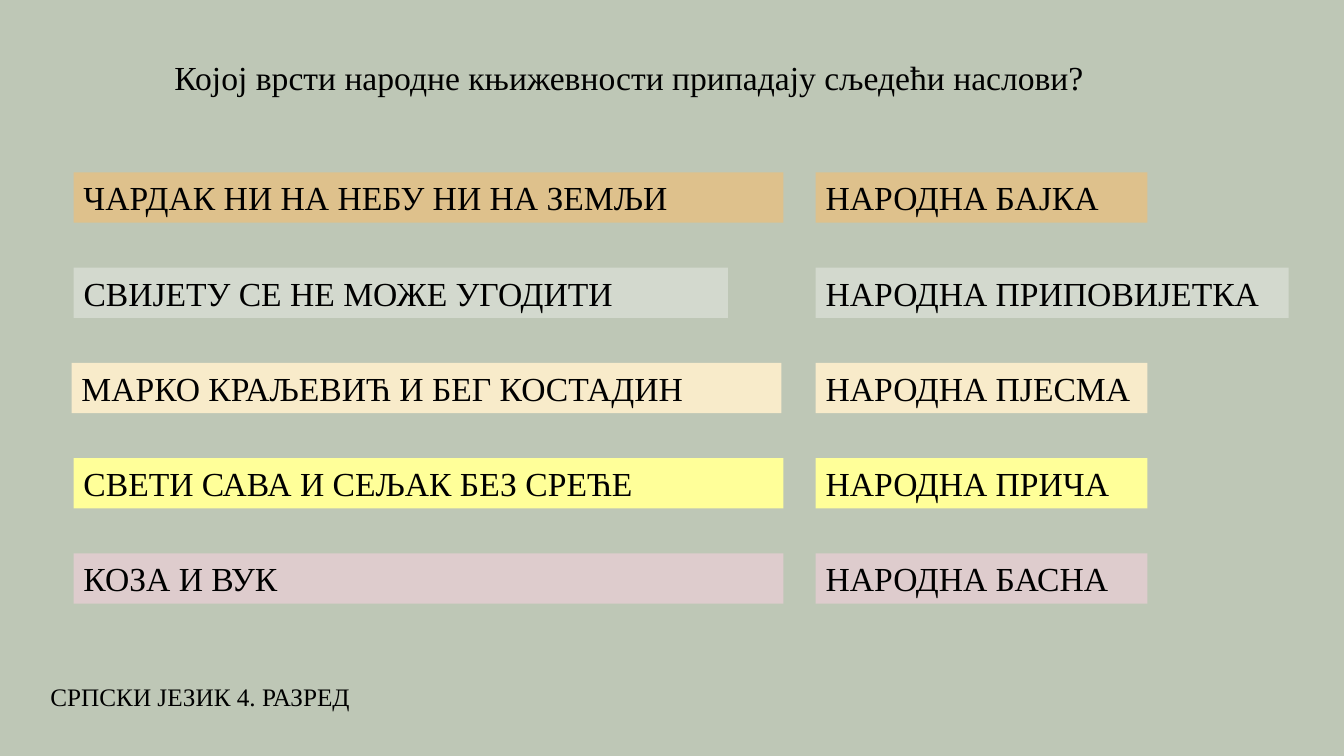
from pptx import Presentation
from pptx.dml.color import RGBColor
from pptx.enum.shapes import MSO_SHAPE as Shape
from pptx.enum.text import MSO_ANCHOR as Anchor, MSO_AUTO_SIZE as AutoSize, PP_ALIGN as Align
from pptx.util import Inches, Pt


def colour(value):
    return RGBColor.from_string(value)


class QuizPage:
    font_name = "Times New Roman"
    ink = "000000"

    def __init__(self, deck, background):
        self.page = deck.slides.add_slide(deck.slide_layouts[5])
        fill = self.page.background.fill
        fill.solid()
        fill.fore_color.rgb = colour(background)

    def set_text(self, box, text, size=24, align=Align.LEFT, anchor=Anchor.TOP, fit=AutoSize.SHAPE_TO_FIT_TEXT):
        frame = box.text_frame
        frame.text = text
        frame.word_wrap = True
        frame.auto_size = fit
        frame.vertical_anchor = anchor
        para = frame.paragraphs[0]
        para.alignment = align
        para.font.name = self.font_name
        para.font.size = Pt(size)
        para.font.color.rgb = colour(self.ink)

    def title(self, text, left, top, width, height):
        box = self.page.shapes.title
        box.left, box.top = Inches(left), Inches(top)
        box.width, box.height = Inches(width), Inches(height)
        self.set_text(box, text)

    def card(self, text, left, top, width, height, fill):
        box = self.page.shapes.add_shape(
            Shape.RECTANGLE, Inches(left), Inches(top), Inches(width), Inches(height))
        box.shadow.inherit = False
        box.fill.solid()
        box.fill.fore_color.rgb = colour(fill)
        box.line.fill.background()
        self.set_text(box, text)

    def footer(self, text, left, top, width, height):
        box = self.page.shapes.add_textbox(
            Inches(left), Inches(top), Inches(width), Inches(height))
        self.set_text(box, text, 18, Align.CENTER, Anchor.MIDDLE, AutoSize.NONE)


ROWS = [
    ("ЧАРДАК НИ НА НЕБУ НИ НА ЗЕМЉИ", 0.73, 7.04, "НАРОДНА БАЈКА", 3.29, "DEC18C"),
    ("СВИЈЕТУ СЕ НЕ МОЖЕ УГОДИТИ", 0.73, 6.49, "НАРОДНА ПРИПОВИЈЕТКА", 4.69, "D3D9CE"),
    ("МАРКО КРАЉЕВИЋ И БЕГ КОСТАДИН", 0.71, 7.04, "НАРОДНА ПЈЕСМА", 3.29, "F8EBCA"),
    ("СВЕТИ САВА И СЕЉАК БЕЗ СРЕЋЕ", 0.73, 7.04, "НАРОДНА ПРИЧА", 3.29, "FFFF99"),
    ("КОЗА И ВУК", 0.73, 7.04, "НАРОДНА БАСНА", 3.29, "DECCCD"),
]
FIRST_TOP, LAST_TOP, CARD_HEIGHT, GENRE_LEFT = 1.71, 5.49, 0.5, 8.09
ROW_STEP = (LAST_TOP - FIRST_TOP) / (len(ROWS) - 1)


def main():
    deck = Presentation()
    deck.slide_width, deck.slide_height = Inches(13.33), Inches(7.5)
    quiz = QuizPage(deck, "BEC7B6")
    quiz.title("Којој врсти народне књижевности припадају сљедећи наслови?", 1.63, 0.51, 9.74, 0.5)
    for index, (story, left, width, genre, genre_width, fill) in enumerate(ROWS):
        top = FIRST_TOP + index * ROW_STEP
        quiz.card(story, left, top, width, CARD_HEIGHT, fill)
        quiz.card(genre, GENRE_LEFT, top, genre_width, CARD_HEIGHT, fill)
    quiz.footer("СРПСКИ ЈЕЗИК 4. РАЗРЕД", -0.19, 6.67, 4.35, 0.48)
    deck.save("out.pptx")


if __name__ == "__main__":
    main()
